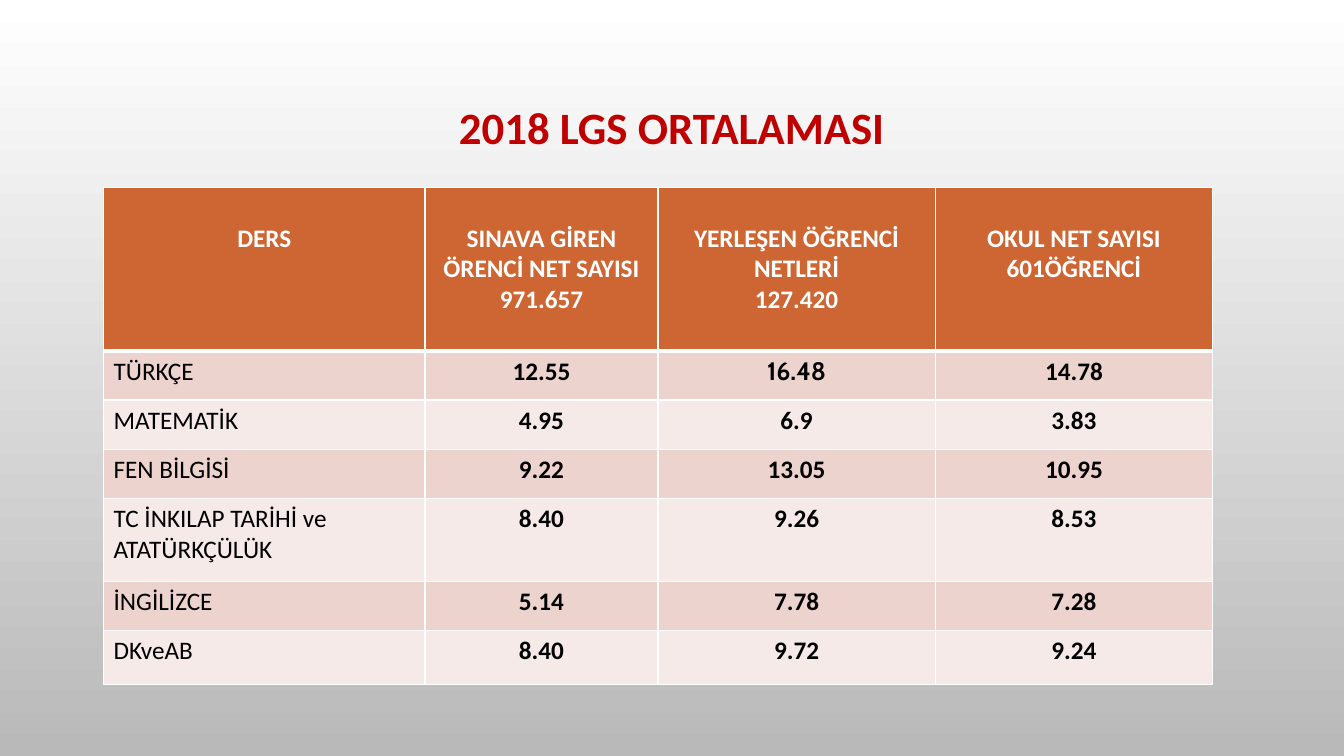
from dataclasses import dataclass

from lxml.etree import SubElement
from pptx import Presentation
from pptx.dml.color import RGBColor
from pptx.enum.text import MSO_ANCHOR, MSO_AUTO_SIZE, PP_ALIGN
from pptx.oxml.ns import qn
from pptx.slide import Slide
from pptx.table import _Cell
from pptx.util import Cm, Pt

WHITE, BLACK, RED = "FFFFFF", "000000", "C00000"
HEADER_FILL = "CE6633"
BAND_FILLS = ("EDD3CE", "F6EAE8")
FONT = "Calibri"


@dataclass(frozen=True)
class Style:
    size: float
    color: str
    bold: bool
    align: PP_ALIGN
    font: str = FONT


@dataclass(frozen=True)
class Subject:
    name: str
    nets: tuple[str, str, str]
    height: float


TITLE = Style(32, RED, True, PP_ALIGN.CENTER)
HEADING = Style(18, WHITE, True, PP_ALIGN.CENTER)
NAME = Style(18, BLACK, False, PP_ALIGN.LEFT)
NET = Style(18, BLACK, True, PP_ALIGN.CENTER)
CABIN_NET = Style(18, BLACK, True, PP_ALIGN.CENTER, "Cabin")

COLUMN_WIDTHS = (8.1, 5.87, 6.99, 6.99)
HEADER_HEIGHT = 4.13
HEADINGS = (
    ("DERS",),
    ("SINAVA GİREN ÖRENCİ NET SAYISI", "971.657"),
    ("YERLEŞEN ÖĞRENCİ NETLERİ", "127.420"),
    ("OKUL NET SAYISI", "601ÖĞRENCİ"),
)
SUBJECTS = (
    Subject("TÜRKÇE", ("12.55", "16.48", "14.78"), 1.23),
    Subject("MATEMATİK", ("4.95", "6.9", "3.83"), 1.24),
    Subject("FEN BİLGİSİ", ("9.22", "13.05", "10.95"), 1.24),
    Subject("TC İNKILAP TARİHİ ve ATATÜRKÇÜLÜK", ("8.40", "9.26", "8.53"), 2.09),
    Subject("İNGİLİZCE", ("5.14", "7.78", "7.28"), 1.24),
    Subject("DKveAB", ("8.40", "9.72", "9.24"), 1.35),
)


def rgb(value: str) -> RGBColor:
    return RGBColor.from_string(value)


def write(frame, lines: tuple[str, ...], style: Style) -> None:
    for index, line in enumerate(lines):
        paragraph = frame.add_paragraph() if index else frame.paragraphs[0]
        paragraph.alignment = style.align
        run = paragraph.add_run()
        run.text = line
        run.font.size = Pt(style.size)
        run.font.name = style.font
        run.font.bold = style.bold
        run.font.color.rgb = rgb(style.color)


def paint_cell(cell: _Cell, fill: str, top: float = 1, bottom: float = 1) -> None:
    properties = cell._tc.get_or_add_tcPr()
    for side, width in (("L", 1), ("R", 1), ("T", top), ("B", bottom)):
        border = SubElement(properties, qn(f"a:ln{side}"), w=str(Pt(width)))
        solid = SubElement(border, qn("a:solidFill"))
        SubElement(solid, qn("a:srgbClr"), val=WHITE)
    cell.fill.solid()
    cell.fill.fore_color.rgb = rgb(fill)


def add_background(slide: Slide) -> None:
    fill = slide.background.fill
    fill.gradient()
    fill.gradient_angle = 270
    for stop, position, color in zip(fill.gradient_stops, (0, 1), (WHITE, "B9B9B9")):
        stop.position = position
        stop.color.rgb = rgb(color)


def add_title(slide: Slide) -> None:
    title = slide.shapes.title
    title.left, title.top = Cm(2.54), Cm(1.73)
    title.width, title.height = Cm(28.78), Cm(4.45)
    frame = title.text_frame
    frame.word_wrap = True
    frame.auto_size = MSO_AUTO_SIZE.NONE
    frame.vertical_anchor = MSO_ANCHOR.MIDDLE
    frame.margin_bottom = Cm(1.5)
    write(frame, ("2018 LGS ORTALAMASI",), TITLE)
    frame.paragraphs[0].line_spacing = 0.9


def add_averages(slide: Slide) -> None:
    heights = (HEADER_HEIGHT, *(subject.height for subject in SUBJECTS))
    averages = slide.shapes.add_table(
        len(heights), len(COLUMN_WIDTHS), Cm(2.61), Cm(4.72),
        Cm(sum(COLUMN_WIDTHS)), Cm(sum(heights)),
    ).table
    for column, width in zip(averages.columns, COLUMN_WIDTHS):
        column.width = Cm(width)
    for row, height in zip(averages.rows, heights):
        row.height = Cm(height)

    # Header row
    for column, lines in enumerate(HEADINGS):
        heading = averages.cell(0, column)
        paint_cell(heading, HEADER_FILL, bottom=3)
        heading.margin_top = Cm(0.9)
        write(heading.text_frame, lines, HEADING)

    # One row for each subject
    for row, subject in enumerate(SUBJECTS, start=1):
        for column, text in enumerate((subject.name, *subject.nets)):
            cell = averages.cell(row, column)
            paint_cell(cell, BAND_FILLS[(row - 1) % 2], top=3 if row == 1 else 1)
            style = NET if column else NAME
            if (row, column) == (1, 2):
                style = CABIN_NET
            write(cell.text_frame, (text,), style)


def main() -> None:
    presentation = Presentation()
    presentation.slide_width, presentation.slide_height = Cm(33.87), Cm(19.05)
    slide = presentation.slides.add_slide(presentation.slide_layouts[5])
    add_background(slide)
    add_title(slide)
    add_averages(slide)
    presentation.save("out.pptx")


if __name__ == "__main__":
    main()
